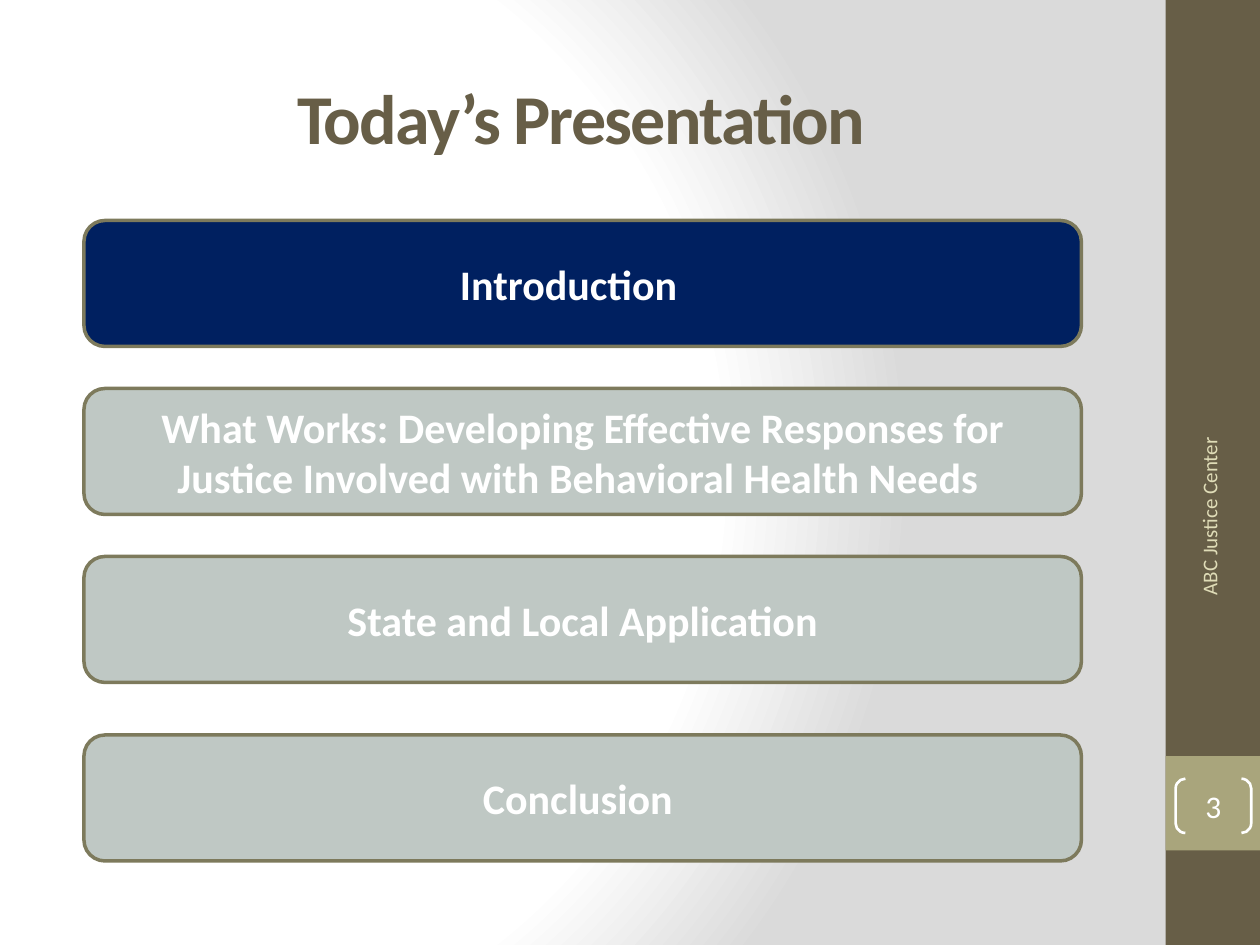
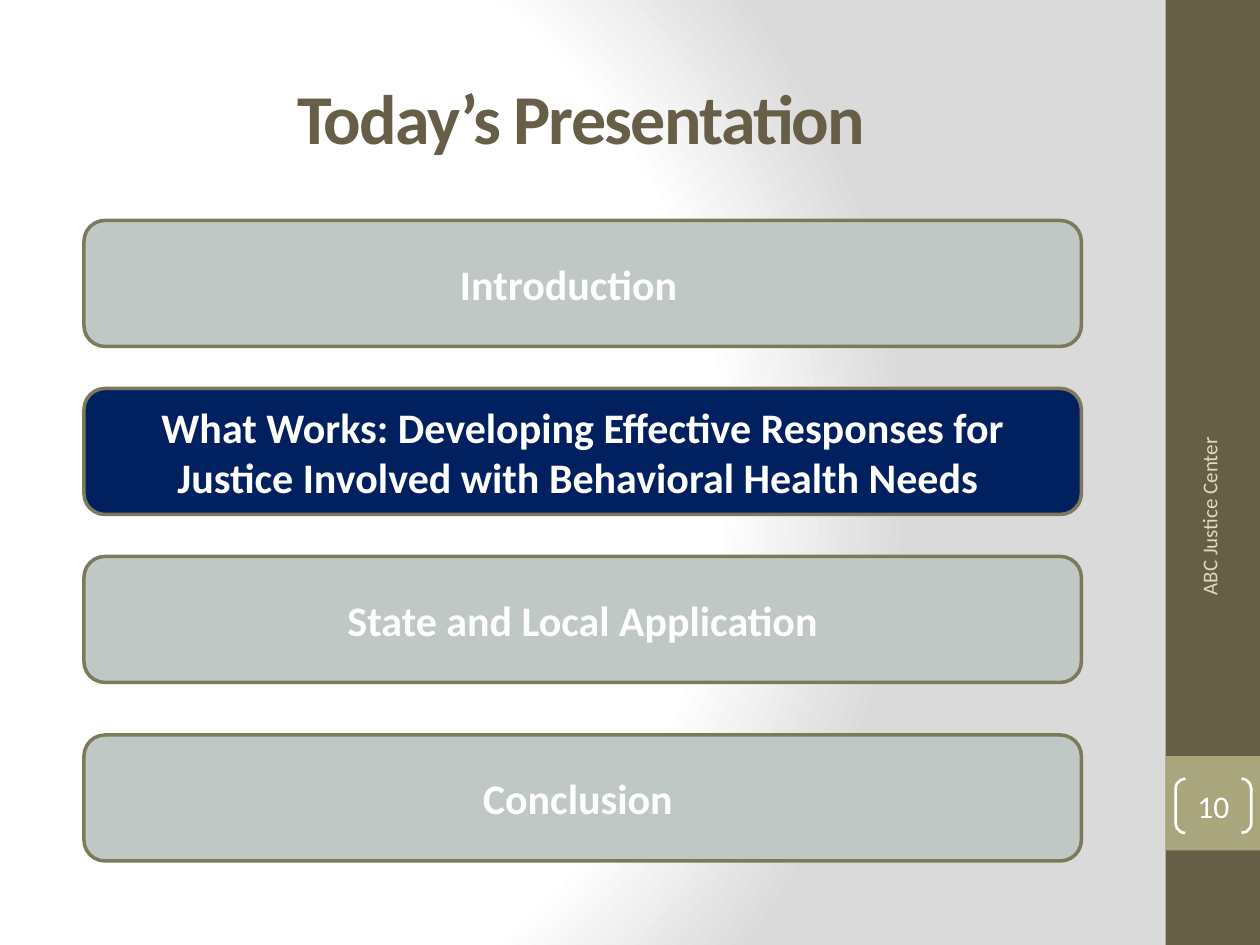
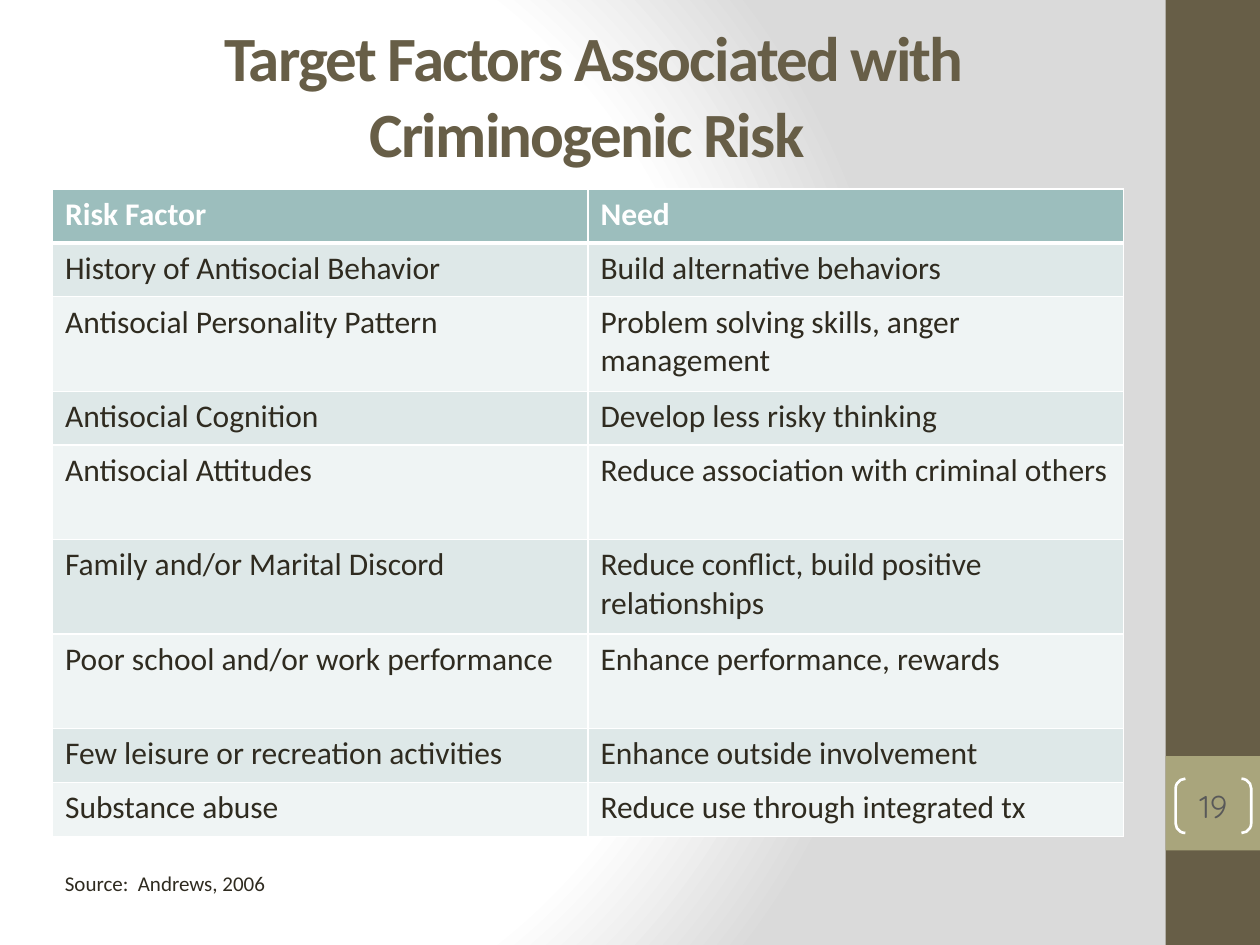
from dataclasses import dataclass

from lxml.etree import SubElement
from pptx import Presentation
from pptx.dml.color import RGBColor
from pptx.enum.shapes import MSO_SHAPE as Shape
from pptx.enum.text import MSO_ANCHOR as Anchor, PP_ALIGN as Align
from pptx.oxml import parse_xml
from pptx.oxml.ns import nsdecls, qn
from pptx.util import Pt


@dataclass(frozen=True)
class Theme:
    font: str = "Calibri"
    alternate_font: str = "Quicksand"
    white: str = "FFFFFF"
    backdrop: str = "DADADA"
    brown: str = "675E47"
    olive: str = "A9A57C"
    cream: str = "DFDCB7"
    outline: str = "7D7A5C"
    active: str = "002060"
    inactive: str = "BFC8C4"
    ink: str = "2F2B20"
    gray: str = "595959"
    header: str = "9CBEBD"
    bands: tuple = ("DEE8E8", "EFF4F4")
    title: int = 40
    long_title: int = 36
    agenda: int = 24
    body: int = 18
    small: int = 12


THEME = Theme()
AGENDA = (
    ("Introduction", 126, 16),
    ("What Works: Developing Effective Responses for Justice Involved "
     "with Behavioral Health Needs ", 222, 0),
    ("State and Local Application", 318, 0),
    ("Conclusion ", 420, 0),
)
RISK_NEEDS = (
    ("Risk Factor", "Need"),
    ("History of Antisocial Behavior", "Build alternative behaviors"),
    ("Antisocial Personality Pattern", "Problem solving skills, anger management"),
    ("Antisocial Cognition", "Develop less risky thinking"),
    ("Antisocial Attitudes", "Reduce association with criminal others"),
    ("Family and/or Marital Discord", "Reduce conflict, build positive relationships"),
    ("Poor school and/or work performance", "Enhance performance, rewards"),
    ("Few leisure or recreation activities", "Enhance outside involvement"),
    ("Substance abuse", "Reduce use through integrated tx"),
)
TALL_ROWS = (2, 4, 5, 6)


class SlideBuilder:
    def __init__(self, theme):
        self.theme = theme
        self.deck = Presentation()
        self.deck.slide_width, self.deck.slide_height = Pt(720), Pt(540)
        self.layout = self.deck.slide_layouts[6]
        self.page = None
        self.background()

    def background(self):
        stops = ((0, self.theme.white), (75, self.theme.white), (100, self.theme.backdrop))
        stop_xml = "".join(
            f'<a:gs pos="{place * 1000}"><a:srgbClr val="{color}"/></a:gs>'
            for place, color in stops)
        self.layout.element.cSld.insert(0, parse_xml(
            f'<p:bg {nsdecls("p", "a")}><p:bgPr><a:gradFill rotWithShape="1">'
            f'<a:gsLst>{stop_xml}</a:gsLst><a:path path="circle">'
            '<a:fillToRect l="20000" t="50000" r="100000" b="50000"/></a:path>'
            '</a:gradFill><a:effectLst/></p:bgPr></p:bg>'))

    def start_page(self):
        self.page = self.deck.slides.add_slide(self.layout)
        self.shape(Shape.RECTANGLE, (666, 0, 54, 540), self.theme.brown)
        self.shape(Shape.RECTANGLE, (666, 432, 54, 54), self.theme.olive)

    def add_words(self, frame, text, size, color, bold=False, align=Align.LEFT, font=None,
                  spacing=None):
        frame.word_wrap = True
        para = frame.paragraphs[0]
        para.alignment = align
        span = para.add_run()
        span.text = text
        span.font.name = font or self.theme.font
        span.font.size = Pt(size)
        span.font.bold = bold
        span.font.color.rgb = RGBColor.from_string(color)
        if spacing:
            span.font._element.set("spc", str(spacing * 100))

    def shape(self, kind, area, fill=None, line=None, width=1):
        box = self.page.shapes.add_shape(kind, *map(Pt, area))
        box.shadow.inherit = False
        if fill:
            box.fill.solid()
            box.fill.fore_color.rgb = RGBColor.from_string(fill)
        else:
            box.fill.background()
        if line:
            box.line.color.rgb = RGBColor.from_string(line)
            box.line.width = Pt(width)
        else:
            box.line.fill.background()
        box.text_frame.vertical_anchor = Anchor.MIDDLE
        return box

    def text(self, area, text, size, color, anchor=Anchor.MIDDLE, **style):
        box = self.page.shapes.add_textbox(*map(Pt, area))
        box.text_frame.vertical_anchor = anchor
        self.add_words(box.text_frame, text, size, color, **style)
        return box

    def title(self, area, text, size):
        self.text(area, text, size, self.theme.brown, bold=True, align=Align.CENTER,
                  spacing=-1)

    def side_label(self, text):
        box = self.text((597.6, 319, 186.5, 28.8), text, self.theme.small,
                        self.theme.cream, align=Align.RIGHT)
        box.rotation = 270

    def page_number(self, number, color, font=None):
        box = self.shape(Shape.DOUBLE_BRACKET, (671.8, 445, 43.2, 31), None,
                         self.theme.white, 1.5)
        box.adjustments[0] = 0.18
        frame = box.text_frame
        frame.margin_left = frame.margin_right = frame.margin_top = frame.margin_bottom = 0
        self.add_words(frame, str(number), self.theme.body, color, align=Align.CENTER,
                       font=font)

    def agenda_item(self, text, top, right_indent, active):
        fill = self.theme.active if active else self.theme.inactive
        box = self.shape(Shape.ROUNDED_RECTANGLE, (48, top, 570, 72), fill,
                         self.theme.outline, 2)
        box.text_frame.margin_right = Pt(7.2 + right_indent)
        self.add_words(box.text_frame, text, self.theme.agenda, self.theme.white, bold=True,
                       align=Align.CENTER)

    def cell_border(self, cell, side, width):
        line = SubElement(cell._tc.get_or_add_tcPr(), qn(f"a:ln{side}"), w=str(Pt(width)))
        fill = SubElement(line, qn("a:solidFill"))
        SubElement(fill, qn("a:srgbClr"), val=self.theme.white)

    def table(self, left, top, column_width, rows, tall_rows):
        heights = [54 if index in tall_rows else 30.8 for index in range(len(rows))]
        columns = len(rows[0])
        area = (left, top, column_width * columns, sum(heights))
        grid = self.page.shapes.add_table(len(rows), columns, *map(Pt, area)).table
        for column in grid.columns:
            column.width = Pt(column_width)
        for index, (values, height) in enumerate(zip(rows, heights)):
            grid.rows[index].height = Pt(height)
            head = index == 0
            fill = self.theme.header if head else self.theme.bands[(index - 1) % 2]
            for cell, value in zip(grid.rows[index].cells, values):
                for side in "LRTB":
                    thick = (index, side) in ((0, "B"), (1, "T"))
                    self.cell_border(cell, side, 3 if thick else 1)
                cell.fill.solid()
                cell.fill.fore_color.rgb = RGBColor.from_string(fill)
                self.add_words(cell.text_frame, value, self.theme.body,
                               self.theme.white if head else self.theme.ink, bold=head)


def agenda_page(builder, number, current):
    builder.start_page()
    builder.title((36, 21.6, 600, 90), "Today’s Presentation ", THEME.title)
    builder.side_label("ABC Justice Center ")
    builder.page_number(number, THEME.white)
    for index, item in reversed(list(enumerate(AGENDA))):
        builder.agenda_item(*item, active=index == current)


def risk_page(builder):
    builder.start_page()
    builder.title((30, 18, 618, 72), "Target Factors Associated with Criminogenic Risk ",
                  THEME.long_title)
    builder.page_number(19, THEME.gray, THEME.alternate_font)
    builder.text((30, 494, 288, 21.6), "Source:  Andrews, 2006", THEME.small, THEME.ink,
                 anchor=Anchor.TOP)
    builder.table(30, 108, 306, RISK_NEEDS, TALL_ROWS)


def main():
    builder = SlideBuilder(THEME)
    agenda_page(builder, 3, current=0)
    agenda_page(builder, 10, current=1)
    risk_page(builder)
    builder.deck.save("out.pptx")


if __name__ == "__main__":
    main()
